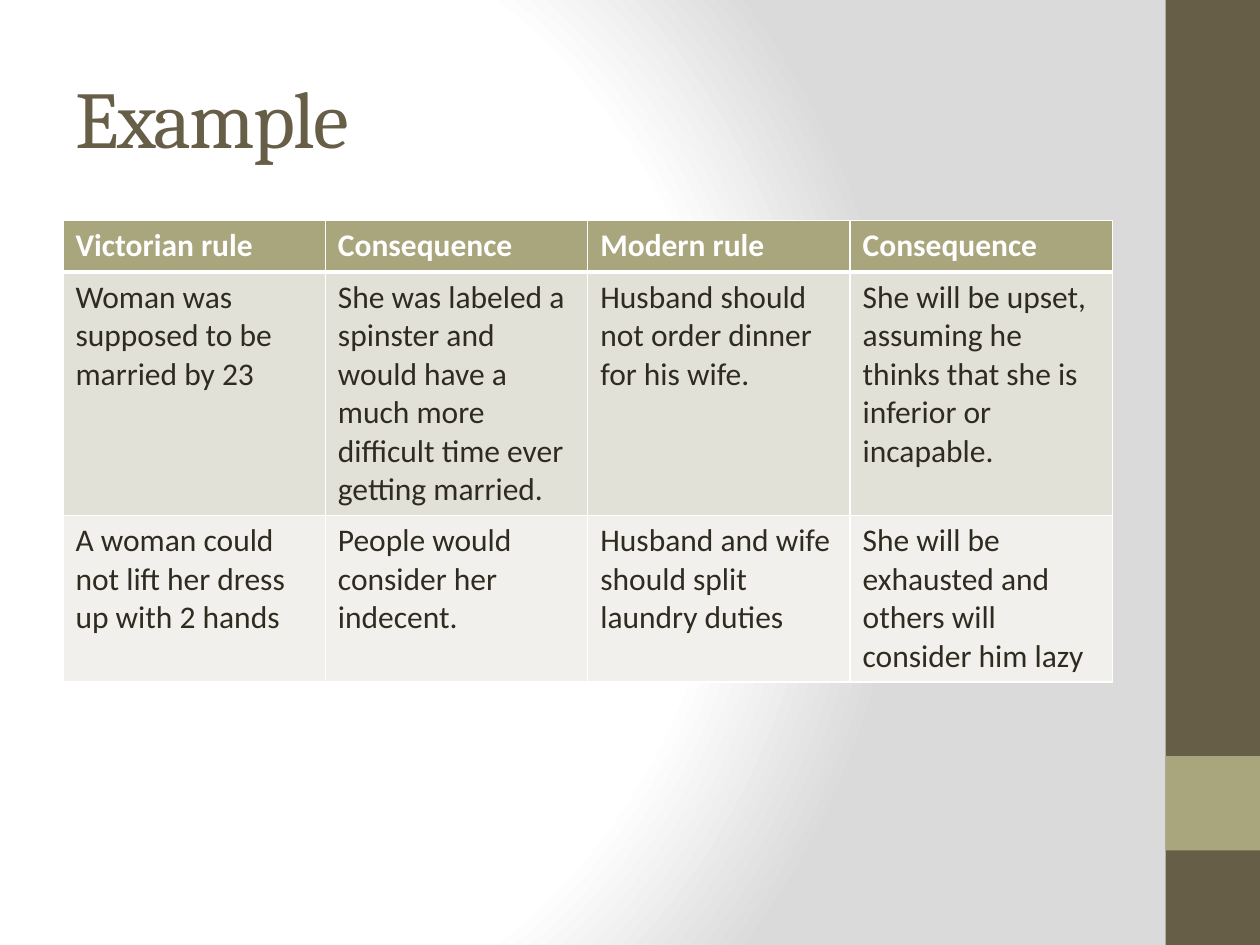
from dataclasses import dataclass

from pptx import Presentation
from pptx.dml.color import RGBColor
from pptx.enum.shapes import MSO_SHAPE
from pptx.enum.text import MSO_ANCHOR, PP_ALIGN
from pptx.oxml import parse_xml
from pptx.oxml.ns import nsdecls
from pptx.util import Inches, Pt

BROWN = RGBColor(0x67, 0x5E, 0x47)
OLIVE = RGBColor(0xA9, 0xA5, 0x7C)
INK = RGBColor(0x2F, 0x2B, 0x20)
WHITE = RGBColor(0xFF, 0xFF, 0xFF)
BAND_DARK = RGBColor(0xE2, 0xE1, 0xD7)
BAND_LIGHT = RGBColor(0xF1, 0xF0, 0xEC)
GREY = RGBColor(0xDA, 0xDA, 0xDA)

# Slide grid
W, H = Inches(10), Inches(7.5)
LEFT, CONTENT_W = Inches(0.5), Inches(8.33)
BAR = 0.075  # side bar, share of the slide's width


@dataclass
class Band:
    top: float  # share of the slide's height
    height: float
    color: RGBColor


@dataclass
class Row:
    height: float  # inches
    fill: RGBColor
    texts: tuple[str, ...]
    header: bool = False


BANDS = (Band(0, 1, BROWN), Band(0.8, 0.1, OLIVE))
ROWS = (
    Row(0.41, OLIVE, ("Victorian rule", "Consequence", "Modern rule", "Consequence"), True),
    Row(1.9, BAND_DARK, (
        "Woman was supposed to be married by 23",
        "She was labeled a spinster and would have a much more difficult time ever getting married.",
        "Husband should not order dinner for his wife.",
        "She will be upset, assuming he thinks that she is inferior or incapable.")),
    Row(1.3, BAND_LIGHT, (
        "A woman could not lift her dress up with 2 hands",
        "People would consider her indecent.",
        "Husband and wife should split laundry duties",
        "She will be exhausted and others will consider him lazy")),
)


def set_background(s) -> None:
    stops = "".join(f'<a:gs pos="{pos * 1000}"><a:srgbClr val="{color}"/></a:gs>'
                    for pos, color in ((0, WHITE), (75, WHITE), (100, GREY)))
    s.element.cSld.insert(0, parse_xml(
        f'<p:bg {nsdecls("p", "a")}><p:bgPr><a:gradFill rotWithShape="1">'
        f'<a:gsLst>{stops}</a:gsLst><a:path path="circle">'
        '<a:fillToRect l="20000" t="50000" r="100000" b="50000"/></a:path>'
        '</a:gradFill><a:effectLst/></p:bgPr></p:bg>'))


def add_band(s, band: Band) -> None:
    sp = s.shapes.add_shape(MSO_SHAPE.RECTANGLE, int(W * (1 - BAR)), int(H * band.top),
                            int(W * BAR), int(H * band.height))
    sp.shadow.inherit = False
    sp.fill.solid()
    sp.fill.fore_color.rgb = band.color
    sp.line.fill.background()


def set_title(s, text: str) -> None:
    sp = s.shapes.title
    sp.left, sp.top, sp.width, sp.height = LEFT, Inches(0.3), CONTENT_W, Inches(1.25)
    tf = sp.text_frame
    tf.text = text
    tf.vertical_anchor = MSO_ANCHOR.MIDDLE
    p = tf.paragraphs[0]
    p.alignment = PP_ALIGN.LEFT
    r = p.runs[0]
    r.font.name, r.font.size = "Cambria", Pt(46)
    r.font.color.rgb = BROWN
    r.font._element.set("spc", "-100")


def set_borders(cell, widths: dict[str, int]) -> None:
    """Widths in points, by side: L, R, T, B."""
    tcPr = cell._tc.get_or_add_tcPr()
    for i, (side, width) in enumerate(widths.items()):
        tcPr.insert(i, parse_xml(
            f'<a:ln{side} {nsdecls("a")} w="{Pt(width)}"><a:solidFill>'
            f'<a:srgbClr val="{WHITE}"/></a:solidFill></a:ln{side}>'))


def add_rules_table(s, rows: tuple[Row, ...]) -> None:
    n = len(rows[0].texts)
    height = Inches(sum(row.height for row in rows))
    table = s.shapes.add_table(len(rows), n, LEFT, Inches(1.75), CONTENT_W, height).table
    for i, row in enumerate(rows):
        table.rows[i].height = Inches(row.height)
        top = 3 if i and rows[i - 1].header else 1
        for j, text in enumerate(row.texts):
            cell = table.cell(i, j)
            cell.text = text
            cell.fill.solid()
            cell.fill.fore_color.rgb = row.fill
            set_borders(cell, {"L": 1, "R": 1, "T": top, "B": 3 if row.header else 1})
            font = cell.text_frame.paragraphs[0].font
            font.name, font.size, font.bold = "Calibri", Pt(18), row.header
            font.color.rgb = WHITE if row.header else INK


def main() -> None:
    prs = Presentation()
    prs.slide_width, prs.slide_height = W, H
    s = prs.slides.add_slide(prs.slide_layouts[5])  # title only
    set_background(s)
    # Side bar
    for band in BANDS:
        add_band(s, band)
    # Content
    set_title(s, "Example")
    add_rules_table(s, ROWS)
    prs.save("out.pptx")


if __name__ == "__main__":
    main()
